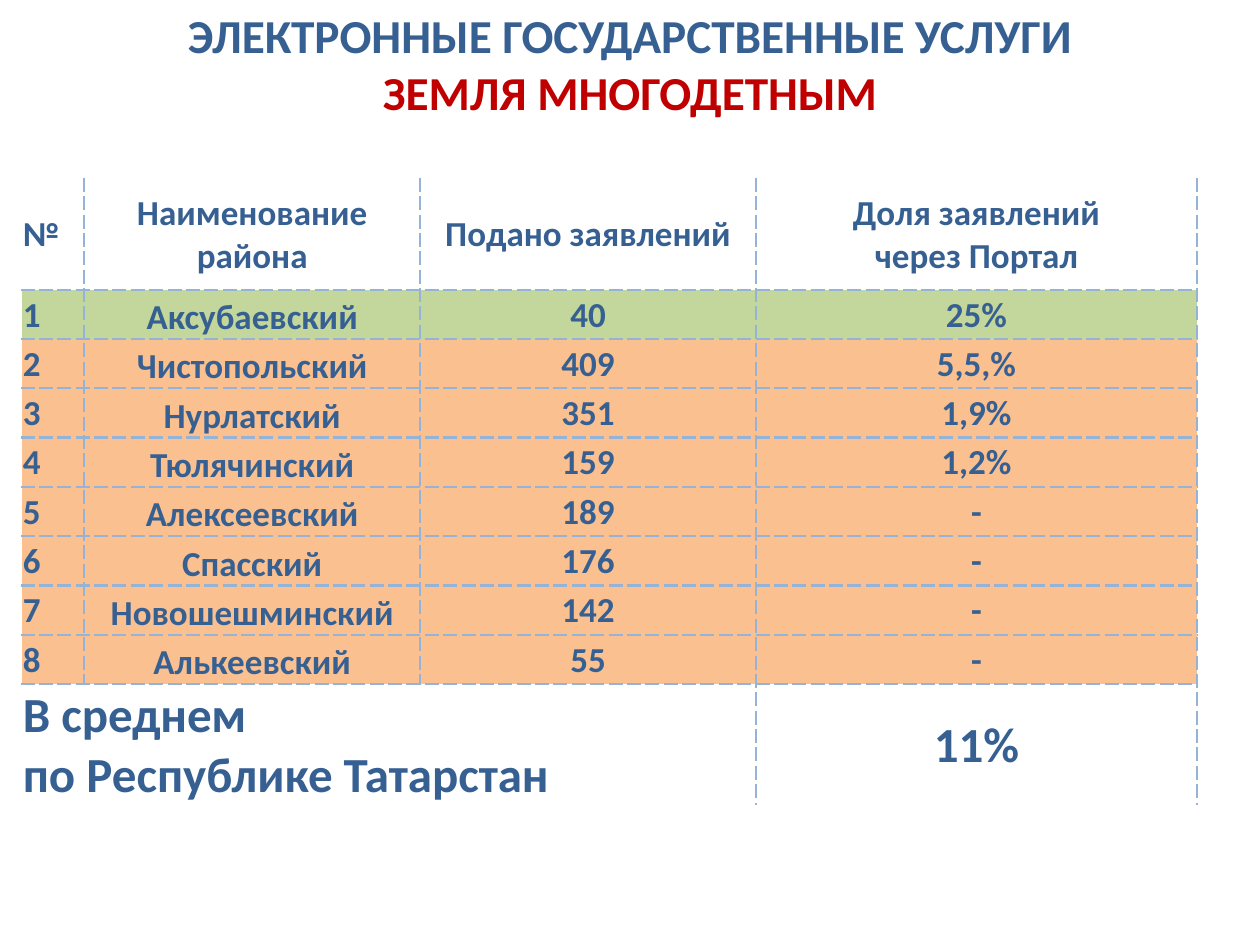
from lxml import etree
from pptx import Presentation
from pptx.dml.color import RGBColor
from pptx.enum import text
from pptx.oxml import ns
from pptx.util import Cm, Pt

COLORS = {"blue": "376092", "red": "C00000", "border": "95B3D7",
          "leader": "C3D69B", "others": "FAC090"}


def set_font(paragraph, size, color):
    font = paragraph.font
    font.name, font.size, font.bold = "Calibri", Pt(size), True
    font.color.rgb = RGBColor.from_string(COLORS[color])


def add_border(cell, side):
    line = etree.SubElement(cell._tc.get_or_add_tcPr(), ns.qn(f"a:ln{side}"), w=str(Pt(1.5)))
    fill = etree.SubElement(line, ns.qn("a:solidFill"))
    etree.SubElement(fill, ns.qn("a:srgbClr"), val=COLORS["border"])
    etree.SubElement(line, ns.qn("a:prstDash"), val="sysDash")


prs = Presentation()
prs.slide_width, prs.slide_height = Cm(25.4), Cm(19.05)
slide = prs.slides.add_slide(prs.slide_layouts[5])

# Title
title = slide.shapes.title
title.left, title.top, title.width, title.height = Cm(0), Cm(0), Cm(25.4), Cm(2.57)
title.text_frame.text = "ЭЛЕКТРОННЫЕ ГОСУДАРСТВЕННЫЕ УСЛУГИ\nЗЕМЛЯ МНОГОДЕТНЫМ"
title.text_frame.auto_size = text.MSO_AUTO_SIZE.NONE
title.text_frame.vertical_anchor = text.MSO_ANCHOR.TOP
for paragraph, color in zip(title.text_frame.paragraphs, ("blue", "red")):
    paragraph.alignment = text.PP_ALIGN.CENTER
    paragraph.space_before = Pt(0)
    set_font(paragraph, 27, color)

# Table content
header = ("№", "Наименование района", "Подано заявлений", "Доля заявлений\nчерез Портал")
districts = [
    ("Аксубаевский", "40", "25%"),
    ("Чистопольский", "409", "5,5,%"),
    ("Нурлатский", "351", "1,9%"),
    ("Тюлячинский", "159", "1,2%"),
    ("Алексеевский", "189", "-"),
    ("Спасский", "176", "-"),
    ("Новошешминский", "142", "-"),
    ("Алькеевский", "55", "-"),
]
average = ("В среднем\nпо Республике Татарстан", "", "", "11%")
rows = [header, *((str(n), *row) for n, row in enumerate(districts, 1)), average]
last_row, last_col = len(rows) - 1, len(header) - 1

# Table grid
col_widths = (1.27, 6.77, 6.77, 8.89)
row_heights = [2.24] + [0.97] * len(districts) + [2.4]
frame = slide.shapes.add_table(len(rows), len(header), Cm(0.43), Cm(3.6),
                               Cm(sum(col_widths)), Cm(sum(row_heights)))
table = frame.table
table.first_row = table.horz_banding = False
for column, width in zip(table.columns, col_widths):
    column.width = Cm(width)
for row, height in zip(table.rows, row_heights):
    row.height = Cm(height)
table.cell(last_row, 0).merge(table.cell(last_row, 2))

# Cells: inner borders plus the right edge
for r, row in enumerate(rows):
    is_district = 0 < r < last_row
    for c, value in enumerate(row):
        cell = table.cell(r, c)
        is_name = is_district and c == 1
        sides = {"L": c > 0, "R": True, "T": r > 0, "B": r < last_row}
        for side in (s for s, shown in sides.items() if shown):
            add_border(cell, side)
        if is_district:
            cell.fill.solid()
            cell.fill.fore_color.rgb = RGBColor.from_string(COLORS["leader" if r == 1 else "others"])
        else:
            cell.fill.background()
        cell.margin_left = cell.margin_right = Cm(0.18 if is_name else 0.03)
        cell.margin_top, cell.margin_bottom = Cm(0 if is_name else 0.03), Cm(0)
        cell.vertical_anchor = text.MSO_ANCHOR.TOP if is_name else text.MSO_ANCHOR.MIDDLE
        if cell.is_spanned:
            continue
        cell.text = value
        for paragraph in cell.text_frame.paragraphs:
            paragraph.alignment = text.PP_ALIGN.CENTER if c else text.PP_ALIGN.LEFT
            if is_name:
                paragraph.line_spacing = 1.15
            set_font(paragraph, 28 if r == last_row else 20, "blue")

prs.save("out.pptx")
